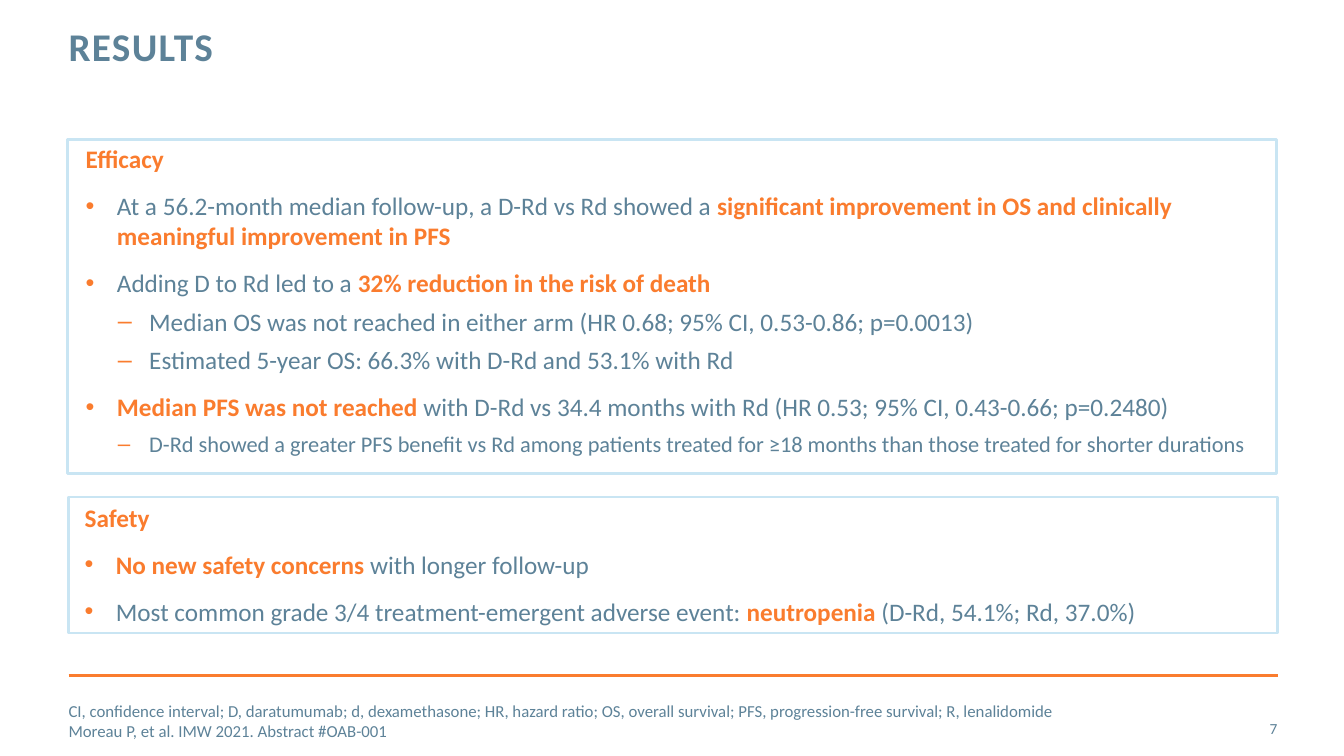
from dataclasses import dataclass

from lxml import etree
from pptx import Presentation
from pptx import util as u
from pptx.dml.color import RGBColor
from pptx.enum import shapes, text
from pptx.oxml import ns

PX = 9144  # 100 px to the inch
FONT = "Calibri"
COLORS = {"slate": "5D8298", "orange": "FA7C2E", "sky": "C9E5F3"}
BULLETS = {1: "•", 2: "–"}
MARGINS = {0: 0, 1: 31, 2: 63}
HANGING = 31


@dataclass
class Box:
    left: int
    top: int
    width: int
    height: int

    def emu(self) -> list[int]:
        return [v * PX for v in (self.left, self.top, self.width, self.height)]


@dataclass
class Line:
    """Text with *emphasis* between asterisks; level 0 has no bullet."""
    words: str
    level: int = 0
    size: int = 18
    before: int = 0


EFFICACY = [
    Line("*Efficacy*"),
    Line("At a 56.2-month median follow-up, a D-Rd vs Rd showed a *significant "
         "improvement in OS and clinically meaningful improvement in PFS*", 1, before=12),
    Line("Adding D to Rd led to a *32% reduction in the risk of death*", 1, before=12),
    Line("Median OS was not reached in either arm (HR 0.68; 95% CI, 0.53-0.86; p=0.0013)",
         2, before=6),
    Line("Estimated 5-year OS: 66.3% with D-Rd and 53.1% with Rd", 2, before=6),
    Line("*Median PFS was not reached* with D-Rd vs 34.4 months with Rd "
         "(HR 0.53; 95% CI, 0.43-0.66; p=0.2480)", 1, before=12),
    Line("D-Rd showed a greater PFS benefit vs Rd among patients treated for ≥18 months "
         "than those treated for shorter durations", 2, 16, 6),
]
SAFETY = [
    Line("*Safety*"),
    Line("*No new safety concerns* with longer follow-up", 1, before=12),
    Line("Most common grade 3/4 treatment-emergent adverse event: *neutropenia* "
         "(D-Rd, 54.1%; Rd, 37.0%)", 1, before=12),
]
FOOTNOTES = [
    Line("CI, confidence interval; D, daratumumab; d, dexamethasone; HR, hazard ratio; "
         "OS, overall survival; PFS, progression-free survival; R, lenalidomide", size=12),
    Line("Moreau P, et al. IMW 2021. Abstract #OAB-001", size=12),
]


def rgb(name: str) -> RGBColor:
    return RGBColor.from_string(COLORS[name])


def set_frame(tf, anchor, insets=(0, 0, 0, 0)) -> None:
    sides = ("margin_left", "margin_top", "margin_right", "margin_bottom")
    values = dict(zip(sides, (v * PX for v in insets)))
    values.update(word_wrap=True, auto_size=text.MSO_AUTO_SIZE.NONE, vertical_anchor=anchor)
    for name, value in values.items():
        setattr(tf, name, value)


def add_bullet(p, level: int) -> None:
    pPr = p._p.get_or_add_pPr()
    pPr.set("marL", str(MARGINS[level] * PX))
    pPr.set("indent", str(-HANGING * PX))
    color = etree.SubElement(pPr, ns.qn("a:buClr"))
    etree.SubElement(color, ns.qn("a:srgbClr"), val=COLORS["orange"])
    etree.SubElement(pPr, ns.qn("a:buFont"), typeface="Arial")
    etree.SubElement(pPr, ns.qn("a:buChar"), char=BULLETS[level])


def write(tf, lines: list[Line], align=text.PP_ALIGN.LEFT) -> None:
    for i, line in enumerate(lines):
        p = tf.paragraphs[0] if i == 0 else tf.add_paragraph()
        if line.level:
            add_bullet(p, line.level)
        p.alignment = align
        p.space_before = u.Pt(line.before)
        for j, part in enumerate(line.words.split("*")):
            if not part:
                continue
            strong = j % 2 == 1
            r = p.add_run()
            r.text = part
            for name, value in dict(name=FONT, size=u.Pt(line.size), bold=strong).items():
                setattr(r.font, name, value)
            r.font.color.rgb = rgb("orange" if strong else "slate")


def add_text(s, box: Box, lines: list[Line], anchor=text.MSO_ANCHOR.TOP,
             align=text.PP_ALIGN.LEFT) -> None:
    tf = s.shapes.add_textbox(*box.emu()).text_frame
    set_frame(tf, anchor)
    write(tf, lines, align)


def add_panel(s, box: Box):
    sp = s.shapes.add_shape(shapes.MSO_SHAPE.RECTANGLE, *box.emu())
    sp.shadow.inherit = False
    sp.fill.background()
    sp.line.color.rgb = rgb("sky")
    sp.line.width = u.Pt(2)
    return sp


def add_rule(s, left: int, right: int, y: int) -> None:
    rule = s.shapes.add_connector(shapes.MSO_CONNECTOR.STRAIGHT,
                                  left * PX, y * PX, right * PX, y * PX)
    rule.line.color.rgb = rgb("orange")
    rule.line.width = u.Pt(2)
    etree.SubElement(rule._element.spPr, ns.qn("a:effectLst"))


def set_title(s, box: Box, words: str) -> None:
    sp = s.shapes.title
    for name, value in zip(("left", "top", "width", "height"), box.emu()):
        setattr(sp, name, value)
    tf = sp.text_frame
    set_frame(tf, text.MSO_ANCHOR.TOP)
    write(tf, [Line(words, size=28)])
    p = tf.paragraphs[0]
    p.line_spacing = u.Pt(30)
    r = p.runs[0]
    r.font.bold = True
    r._r.get_or_add_rPr().set("spc", "100")


def main() -> None:
    prs = Presentation()
    prs.slide_width, prs.slide_height = 1333 * PX, 750 * PX
    s = prs.slides.add_slide(prs.slide_layouts[5])

    # Title and footer rule
    set_title(s, Box(68, 27, 956, 88), "RESULTS")
    add_rule(s, 68, 1268, 670)

    # Efficacy
    add_panel(s, Box(67, 138, 1199, 332))
    add_text(s, Box(85, 142, 1159, 328), EFFICACY)

    # Safety
    safety = add_panel(s, Box(68, 493, 1199, 135))
    set_frame(safety.text_frame, text.MSO_ANCHOR.TOP, (16, 5, 10, 5))
    write(safety.text_frame, SAFETY)

    # Footnotes and slide number
    middle = text.MSO_ANCHOR.MIDDLE
    add_text(s, Box(68, 695, 1158, 40), FOOTNOTES, middle)
    add_text(s, Box(1181, 703, 86, 40), [Line("7", size=11)], middle, text.PP_ALIGN.RIGHT)

    prs.save("out.pptx")


if __name__ == "__main__":
    main()
